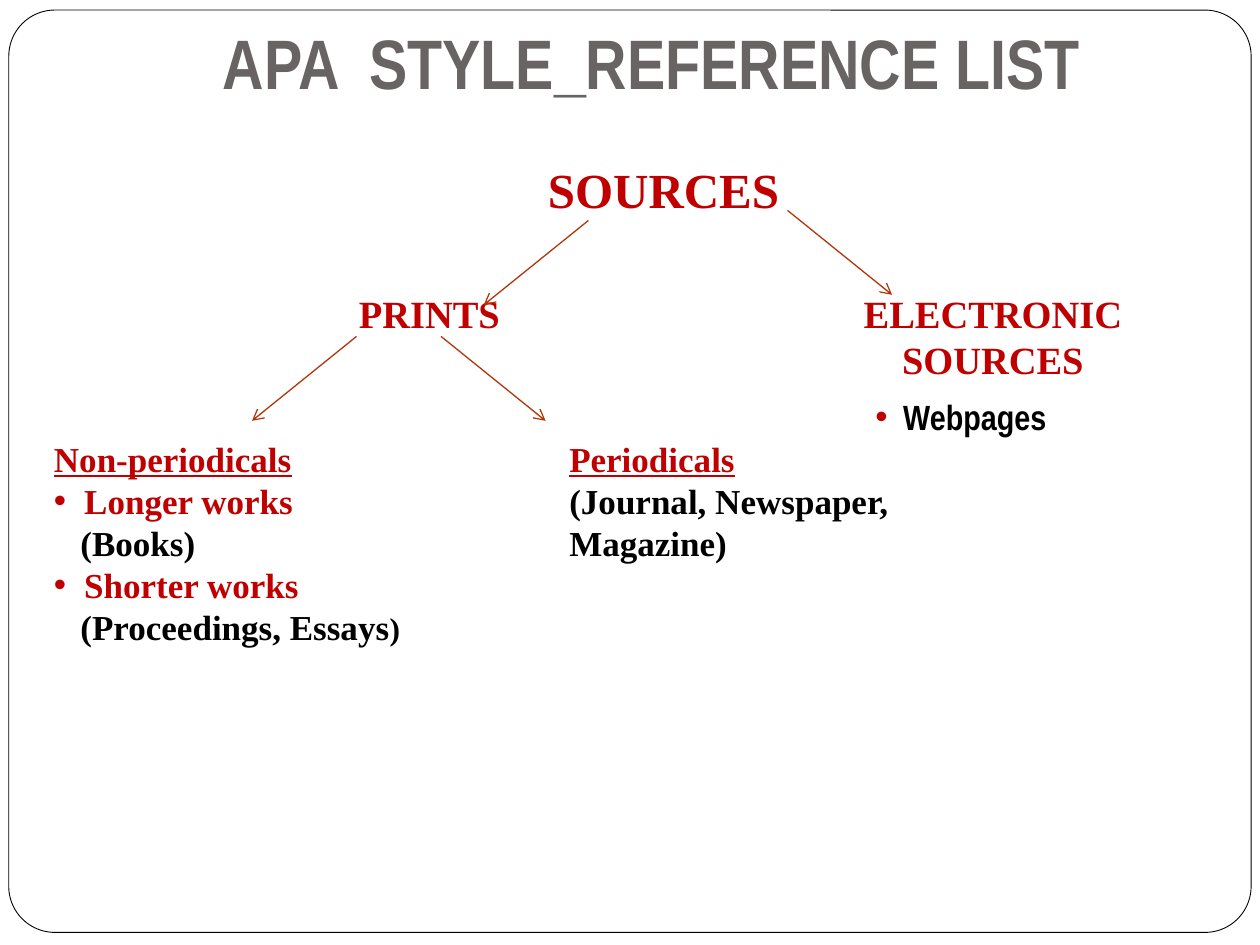
"""Build a slide that charts the source types of an APA reference list."""
from dataclasses import dataclass

from lxml import etree
from pptx import Presentation
from pptx.dml.color import RGBColor
from pptx.enum.shapes import MSO_CONNECTOR, MSO_SHAPE
from pptx.enum.text import MSO_ANCHOR, MSO_AUTO_SIZE, PP_ALIGN
from pptx.oxml.ns import qn
from pptx.util import Inches, Pt

STRAIGHT = MSO_CONNECTOR.STRAIGHT
ROUNDED = MSO_SHAPE.ROUNDED_RECTANGLE
BOTTOM = MSO_ANCHOR.BOTTOM
FIT_SHAPE, NO_FIT = MSO_AUTO_SIZE.SHAPE_TO_FIT_TEXT, MSO_AUTO_SIZE.NONE
LEFT, CENTER = PP_ALIGN.LEFT, PP_ALIGN.CENTER

WHITE = RGBColor(0xFF, 0xFF, 0xFF)
BLACK = RGBColor(0x00, 0x00, 0x00)
GRAY = RGBColor(0x69, 0x64, 0x64)
RED = RGBColor(0xC0, 0x00, 0x00)
RUST = RGBColor(0xB1, 0x36, 0x0B)
SERIF, NARROW = "Times New Roman", "Arial Narrow"


@dataclass
class Line:
    """One paragraph of a label."""
    text: str
    color: RGBColor = RED
    underline: bool = False
    bullet: bool = False
    indent: float = 0
    small_end: str = ""


class ReferenceSlide:
    """Holds the slide and the style of its elements."""

    def __init__(self, slide):
        self.slide = slide
        self.shapes = slide.shapes

    def set_font(self, font, name, size, color):
        font.name, font.size, font.bold = name, Pt(size), True
        font.color.rgb = color

    def frame(self, left, top, width, height):
        border = self.shapes.add_shape(
            ROUNDED, Inches(left), Inches(top), Inches(width), Inches(height))
        border.adjustments[0] = 0.05
        border.shadow.inherit = False
        border.fill.solid()
        border.fill.fore_color.rgb = WHITE
        border.line.color.rgb = BLACK
        border.line.width = Pt(0.5)
        self.shapes._spTree.insert(2, border._element)

    def title(self, text, left, top, width, height):
        heading = self.shapes.title
        heading.left, heading.top = Inches(left), Inches(top)
        heading.width, heading.height = Inches(width), Inches(height)
        body = heading.text_frame
        body.text = text
        body.auto_size = NO_FIT
        body.vertical_anchor = BOTTOM
        body.margin_bottom = Inches(0.1)
        body.paragraphs[0].alignment = CENTER
        self.set_font(body.paragraphs[0].font, NARROW, 40, GRAY)

    def bullet(self, paragraph, indent):
        props = paragraph._p.get_or_add_pPr()
        props.set("indent", str(-Inches(indent)))
        color = etree.SubElement(props, qn("a:buClr"))
        etree.SubElement(color, qn("a:srgbClr"), val=str(RED))
        etree.SubElement(props, qn("a:buFont"), typeface="Arial")
        etree.SubElement(props, qn("a:buChar"), char="•")

    def label(self, lines, left, top, width, height, size=20, font=SERIF, align=LEFT):
        box = self.shapes.add_textbox(
            Inches(left), Inches(top), Inches(width), Inches(height))
        body = box.text_frame
        body.word_wrap = True
        body.auto_size = FIT_SHAPE
        for index, line in enumerate(lines):
            paragraph = body.add_paragraph() if index else body.paragraphs[0]
            paragraph.alignment = align
            paragraph._p.get_or_add_pPr().set("marL", str(Inches(line.indent)))
            if line.bullet:
                self.bullet(paragraph, line.indent)
            self.set_font(paragraph.font, font, size, line.color)
            paragraph.font.underline = line.underline
            paragraph.add_run().text = line.text
            if line.small_end:
                ending = paragraph.add_run()
                ending.text = line.small_end
                ending.font.size = Pt(size - 2)

    def arrow(self, x1, y1, x2, y2):
        branch = self.shapes.add_connector(
            STRAIGHT, Inches(x1), Inches(y1), Inches(x2), Inches(y2))
        branch.line.color.rgb = RUST
        branch.line.width = Pt(0.75)
        etree.SubElement(branch.line._get_or_add_ln(), qn("a:tailEnd"), type="arrow")
        etree.SubElement(branch._element.spPr, qn("a:effectLst"))


def main():
    deck = Presentation()
    deck.slide_width, deck.slide_height = Inches(10), Inches(7.5)
    page = ReferenceSlide(deck.slides.add_slide(deck.slide_layouts[5]))

    page.frame(0.07, 0.08, 9.86, 7.32)
    page.title("APA  STYLE_REFERENCE LIST", 0.92, -0.33, 8.5, 1.25)

    page.label([Line("SOURCES")], 4.25, 1.22, 2.42, 0.57, size=28)
    page.label([Line("PRINTS")], 2.75, 2.25, 1.75, 0.47, size=22)
    page.label([Line("ELECTRONIC SOURCES")], 6.67, 2.25, 2.42, 0.84,
               size=22, align=CENTER)
    page.label([Line("Webpages", BLACK, bullet=True, indent=0.22)],
               6.85, 3.09, 2.17, 0.44, font=NARROW)
    page.label([
        Line("Non-periodicals", underline=True),
        Line("Longer works", bullet=True, indent=0.24),
        Line("(Books)", BLACK, indent=0.21),
        Line("Shorter works", bullet=True, indent=0.24),
        Line("(Proceedings, Essays", BLACK, indent=0.21, small_end=")"),
    ], 0.33, 3.42, 4.33, 1.78)
    page.label([
        Line("Periodicals", underline=True),
        Line("(Journal, Newspaper,", BLACK),
        Line("Magazine)", BLACK),
    ], 4.42, 3.42, 4.33, 1.11)

    reach, drop = 0.83, 0.67
    for x, y, side in ((2.83, 2.67, -1), (3.5, 2.67, 1),
                       (6.25, 1.67, 1), (4.67, 1.75, -1)):
        page.arrow(x, y, x + side * reach, y + drop)

    deck.save("out.pptx")


if __name__ == "__main__":
    main()
